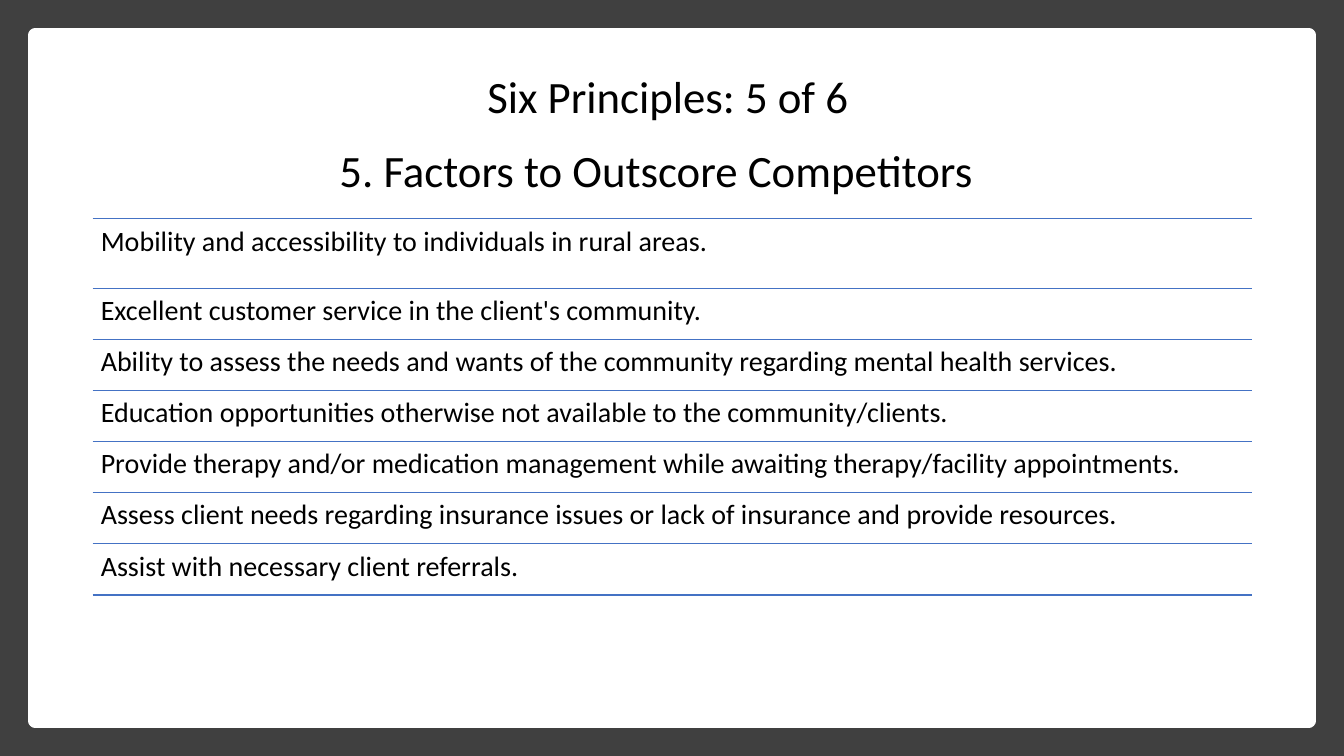
from dataclasses import dataclass

from lxml.etree import SubElement
from pptx import Presentation
from pptx.dml.color import RGBColor
from pptx.enum.shapes import MSO_CONNECTOR, MSO_SHAPE
from pptx.enum.text import MSO_ANCHOR, PP_ALIGN
from pptx.oxml.ns import qn
from pptx.slide import Slide
from pptx.util import Inches, Pt

COLORS = {"frame": "404040", "panel": "FFFFFF", "text": "000000", "rule": "4472C4"}
FONT = "Calibri"

LIST_LEFT, LIST_TOP, LIST_WIDTH = 0.92, 2.17, 11.5
FIRST_ROW_HEIGHT = 0.69
ROW_HEIGHT = 0.507

FACTORS = [
    "Mobility and accessibility to individuals in rural areas.",
    "Excellent customer service in the client's community.",
    "Ability to assess the needs and wants of the community regarding mental health services.",
    "Education opportunities otherwise not available to the community/clients.",
    "Provide therapy and/or medication management while awaiting therapy/facility appointments.",
    "Assess client needs regarding insurance issues or lack of insurance and provide resources.",
    "Assist with necessary client referrals.",
]


@dataclass
class Panel:
    left: float
    top: float
    width: float
    height: float
    color: str
    line_width: float = 0


@dataclass
class Label:
    text: str
    left: float
    top: float
    width: float
    height: float
    size: float = 20
    align: PP_ALIGN = PP_ALIGN.LEFT
    anchor: MSO_ANCHOR = MSO_ANCHOR.TOP
    line_spacing: float = 0.9
    margin_x: float = 0.08
    margin_y: float = 0.08


def rgb(name: str) -> RGBColor:
    return RGBColor.from_string(COLORS[name])


def add_panel(slide: Slide, panel: Panel) -> None:
    shape = slide.shapes.add_shape(
        MSO_SHAPE.RECTANGLE, Inches(panel.left), Inches(panel.top),
        Inches(panel.width), Inches(panel.height))
    shape.shadow.inherit = False
    shape.fill.solid()
    shape.fill.fore_color.rgb = rgb(panel.color)
    if panel.line_width:
        shape.line.color.rgb = rgb(panel.color)
        shape.line.width = Pt(panel.line_width)
    else:
        shape.line.fill.background()


def add_label(slide: Slide, label: Label) -> None:
    shape = slide.shapes.add_textbox(
        Inches(label.left), Inches(label.top), Inches(label.width), Inches(label.height))
    frame = shape.text_frame
    frame.word_wrap = True
    frame.vertical_anchor = label.anchor
    frame.margin_left = frame.margin_right = Inches(label.margin_x)
    frame.margin_top = frame.margin_bottom = Inches(label.margin_y)
    paragraph = frame.paragraphs[0]
    paragraph.alignment = label.align
    paragraph.line_spacing = label.line_spacing
    run = paragraph.add_run()
    run.text = label.text
    run.font.name = FONT
    run.font.size = Pt(label.size)
    run.font.color.rgb = rgb("text")


def add_rule(slide: Slide, top: float) -> None:
    connector = slide.shapes.add_connector(
        MSO_CONNECTOR.STRAIGHT, Inches(LIST_LEFT), Inches(top),
        Inches(LIST_LEFT + LIST_WIDTH), Inches(top))
    connector.line.color.rgb = rgb("rule")
    connector.line.width = Pt(1)
    SubElement(connector._element.spPr, qn("a:effectLst"))


def add_factor_list(slide: Slide) -> None:
    top = LIST_TOP
    add_rule(slide, top)
    for index, factor in enumerate(FACTORS):
        height = ROW_HEIGHT if index else FIRST_ROW_HEIGHT
        add_label(slide, Label(factor, LIST_LEFT, top, LIST_WIDTH, height))
        top += height
        add_rule(slide, top)


def main() -> None:
    presentation = Presentation()
    presentation.slide_width = Inches(13.33)
    presentation.slide_height = Inches(7.5)
    slide = presentation.slides.add_slide(presentation.slide_layouts[6])

    # Dark frame around a white panel
    add_panel(slide, Panel(0, 0, 13.33, 7.5, "frame"))
    add_panel(slide, Panel(0.35, 0.35, 12.63, 6.8, "panel", 10))

    # Headings
    add_label(slide, Label("Six Principles: 5 of 6", 2.65, 0.63, 7.95, 0.64, 32,
                           PP_ALIGN.CENTER, line_spacing=1, margin_x=0.1, margin_y=0.05))
    add_label(slide, Label("5. Factors to Outscore Competitors", 0.76, 1.27, 11.5, 0.9, 32,
                           PP_ALIGN.CENTER, MSO_ANCHOR.MIDDLE, margin_x=0.1, margin_y=0.05))

    # Ruled list of factors
    add_factor_list(slide)

    presentation.save("out.pptx")


if __name__ == "__main__":
    main()
